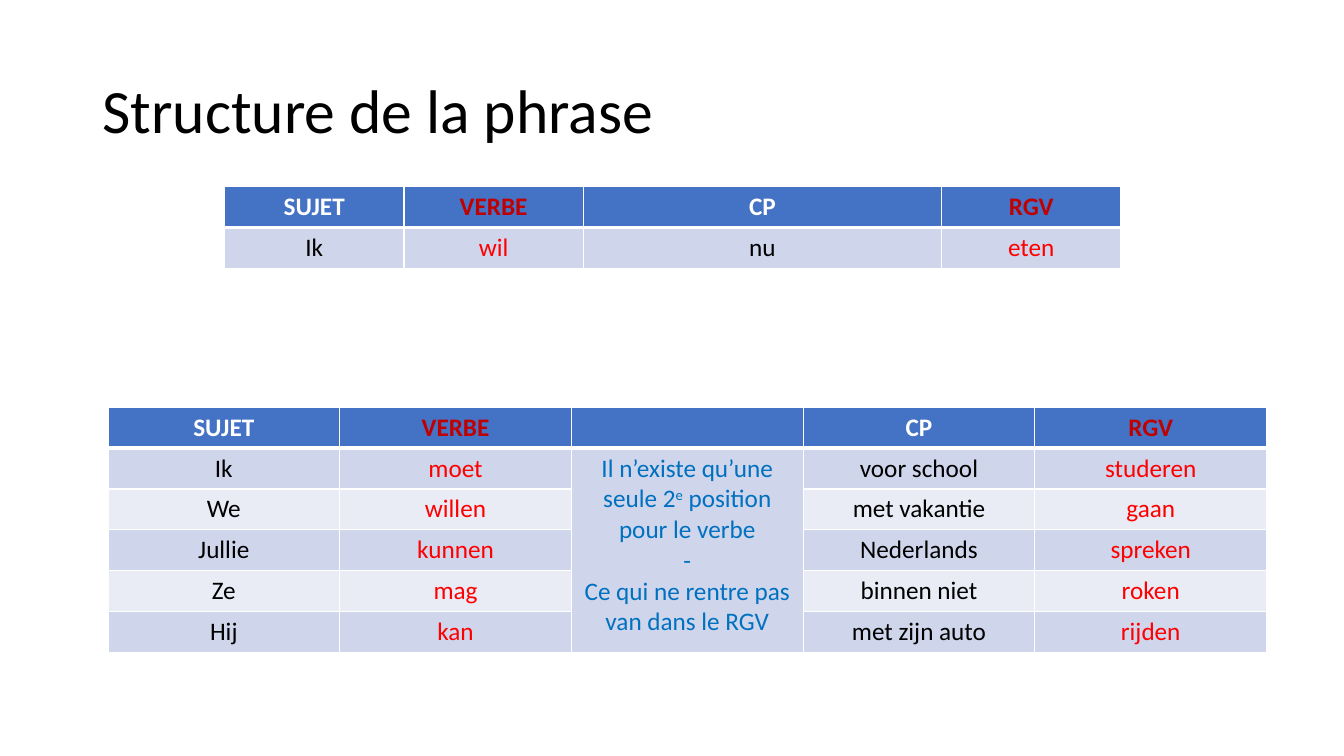
from dataclasses import dataclass

from lxml import etree
from pptx import Presentation
from pptx.dml.color import RGBColor
from pptx.enum.text import MSO_ANCHOR, MSO_AUTO_SIZE, PP_ALIGN
from pptx.oxml.ns import qn
from pptx.util import Cm, Pt

LEFT, CENTER = PP_ALIGN.LEFT, PP_ALIGN.CENTER
MIDDLE = MSO_ANCHOR.MIDDLE
NO_AUTOFIT = MSO_AUTO_SIZE.NONE

FONT = "Calibri"
WHITE, BLACK = "FFFFFF", "000000"
RED, DARK_RED, BLUE = "FF0000", "C00000", "0070C0"
HEADER, BAND_ODD, BAND_EVEN = "4472C4", "CFD5EA", "E9EBF5"
VERB_HEADS = ("VERBE", "RGV")
ROW_HEIGHT = 1.03
THIN, THICK = 1, 3


@dataclass
class Grid:
    left: float
    top: float
    widths: list[float]
    rows: list[list[str]]


EXAMPLES = Grid(2.72, 10.26, [5.84] * 5, [
    ["SUJET", "VERBE", "", "CP", "RGV"],
    ["Ik", "moet", "", "voor school", "studeren"],
    ["We", "willen", "", "met vakantie", "gaan"],
    ["Jullie", "kunnen", "", "Nederlands", "spreken"],
    ["Ze", "mag", "", "binnen niet", "roken"],
    ["Hij", "kan", "", "met zijn auto", "rijden"],
])
MODEL = Grid(5.66, 4.7, [4.52, 4.52, 9.03, 4.52], [
    ["SUJET", "VERBE", "CP", "RGV"],
    ["Ik", "wil", "nu", "eten"],
])
RULE = [
    [("Il n’existe qu’une seule 2", 0), ("e", 30), (" position pour le verbe", 0)],
    [("-", 0)],
    [("Ce qui ne rentre pas van dans le RGV", 0)],
]


def rgb(value: str) -> RGBColor:
    return RGBColor.from_string(value)


def add_text(p, text: str, *, size=18, color=BLACK, bold=False, align=CENTER, raised=0) -> None:
    p.alignment = align
    r = p.add_run()
    r.text = text
    r.font.name = FONT
    r.font.size = Pt(size)
    r.font.bold = bold
    r.font.color.rgb = rgb(color)
    if raised:
        r._r.get_or_add_rPr().set("baseline", str(raised * 1000))


def set_borders(cell, top: int, bottom: int) -> None:
    tc_pr = cell._tc.get_or_add_tcPr()
    sides = {"lnL": THIN, "lnR": THIN, "lnT": top, "lnB": bottom}
    for i, (side, width) in enumerate(sides.items()):
        ln = etree.Element(qn(f"a:{side}"), w=str(Pt(width)))
        fill = etree.SubElement(ln, qn("a:solidFill"))
        etree.SubElement(fill, qn("a:srgbClr"), val=WHITE)
        tc_pr.insert(i, ln)


def add_grid(s, grid: Grid):
    n_rows, n_cols = len(grid.rows), len(grid.widths)
    table = s.shapes.add_table(
        n_rows, n_cols, Cm(grid.left), Cm(grid.top),
        Cm(sum(grid.widths)), Cm(ROW_HEIGHT * n_rows)).table
    for column, width in zip(table.columns, grid.widths):
        column.width = Cm(width)
    for i, texts in enumerate(grid.rows):
        table.rows[i].height = Cm(ROW_HEIGHT)
        is_head = i == 0
        band = HEADER if is_head else BAND_ODD if i % 2 else BAND_EVEN
        for j, text in enumerate(texts):
            cell = table.cell(i, j)
            cell.fill.solid()
            cell.fill.fore_color.rgb = rgb(band)
            set_borders(cell, THICK if i == 1 else THIN, THICK if is_head else THIN)
            is_verb = grid.rows[0][j] in VERB_HEADS
            if is_head:
                color = DARK_RED if is_verb else WHITE
            else:
                color = RED if is_verb else BLACK
            if text:
                add_text(cell.text_frame.paragraphs[0], text, color=color, bold=is_head)
    return table


def add_rule(table) -> None:
    cell = table.cell(1, 2)
    cell.merge(table.cell(len(table.rows) - 1, 2))
    tf = cell.text_frame
    for i, parts in enumerate(RULE):
        p = tf.add_paragraph() if i else tf.paragraphs[0]
        for text, raised in parts:
            add_text(p, text, color=BLUE, raised=raised)


def add_title(s, text: str) -> None:
    title = s.shapes.title
    title.left, title.top, title.width, title.height = Cm(2.33), Cm(1.01), Cm(29.21), Cm(3.68)
    tf = title.text_frame
    tf.word_wrap = True
    tf.auto_size = NO_AUTOFIT
    tf.vertical_anchor = MIDDLE
    p = tf.paragraphs[0]
    p.line_spacing = 0.9
    add_text(p, text, size=44, align=LEFT)


def main() -> None:
    prs = Presentation()
    prs.slide_width, prs.slide_height = Cm(33.87), Cm(19.05)
    s = prs.slides.add_slide(prs.slide_layouts[5])
    add_title(s, "Structure de la phrase")
    add_rule(add_grid(s, EXAMPLES))
    add_grid(s, MODEL)
    prs.save("out.pptx")


if __name__ == "__main__":
    main()
